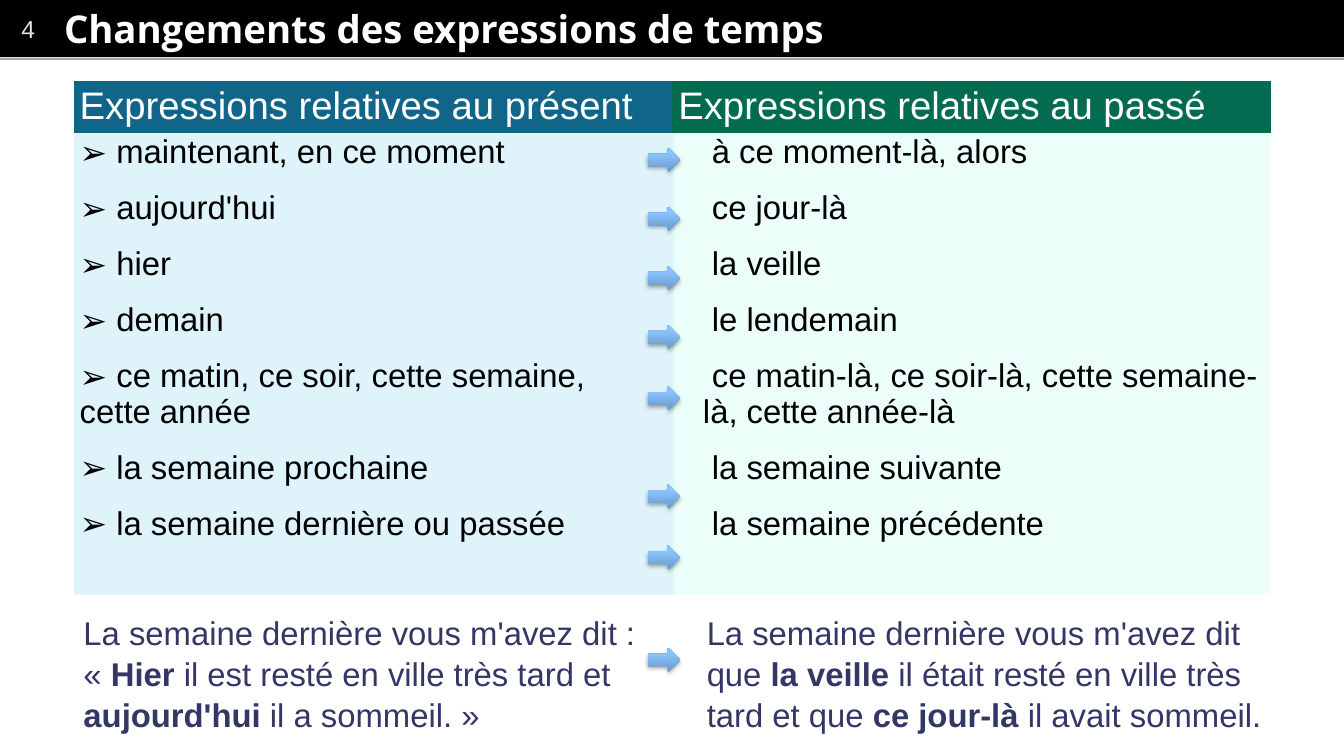
from lxml.etree import SubElement
from pptx import Presentation
from pptx.dml.color import RGBColor
from pptx.enum.shapes import MSO_CONNECTOR, MSO_SHAPE
from pptx.enum.text import MSO_ANCHOR, MSO_AUTO_SIZE
from pptx.oxml import parse_xml
from pptx.oxml.ns import nsdecls, qn
from pptx.util import Pt

SCALE = 9144
NO_GRID_STYLE = "{2D5ABB26-0587-4C30-8999-92F81FD0307C}"
HEADINGS = [
    ("Expressions relatives au présent", "106588"),
    ("Expressions relatives au passé", "036B50"),
]
CHANGES = [
    ("maintenant, en ce moment", "à ce moment-là, alors", 150),
    ("aujourd'hui", "ce jour-là", 210),
    ("hier", "la veille", 270),
    ("demain", "le lendemain", 330),
    ("ce matin, ce soir, cette semaine,\vcette année",
     "ce matin-là, ce soir-là, cette semaine-là, cette année-là", 392),
    ("la semaine prochaine", "la semaine suivante", 492),
    ("la semaine dernière ou passée", "la semaine précédente", 554),
]
DIRECT_SPEECH = [
    ("La semaine dernière vous m'avez dit : « ", False),
    ("Hier", True),
    (" il est resté en ville très tard et ", False),
    ("aujourd'hui", True),
    (" il a sommeil. »", False),
]
REPORTED_SPEECH = [
    ("La semaine dernière vous m'avez dit que ", False),
    ("la veille", True),
    (" il était resté en ville très tard et que ", False),
    ("ce jour-là ", True),
    ("il avait sommeil.", False),
]


def px(length):
    """Turn whole px into EMU."""
    return length * SCALE


def color(value):
    """Turn a hex string into a colour."""
    return RGBColor.from_string(value)


def write(paragraph, text, *, size=24, font="Arial", ink="000000", bold=False,
          after=0, spacing=None, margin=0, indent=0, bullet=None):
    """Add formatted text, given as a string or as (text, bold) pairs."""
    properties = paragraph._p.get_or_add_pPr()
    properties.set("marL", str(px(margin)))
    properties.set("indent", str(px(indent)))
    paragraph.space_after = Pt(after)
    if spacing:
        paragraph.line_spacing = spacing
    if bullet:
        SubElement(properties, qn("a:buFont"), typeface="Arial")
        SubElement(properties, qn("a:buChar"), char=bullet)
    runs = [(text, bold)] if isinstance(text, str) else text
    for index, (part, strong) in enumerate(runs):
        for number, line in enumerate(part.split("\v")):
            if number:
                paragraph.add_line_break()
            run = paragraph.add_run()
            run.text = line
            run.font.name = font
            run.font.size = Pt(size)
            run.font.bold = strong
            run.font.color.rgb = color(ink)


class Deck:
    """Hold the style and the current slide."""

    def __init__(self, width, height):
        """Start a presentation with one blank slide."""
        self.presentation = Presentation()
        self.presentation.slide_width = px(width)
        self.presentation.slide_height = px(height)
        self.slide = self.presentation.slides.add_slide(
            self.presentation.slide_layouts[6])
        self.shapes = self.slide.shapes

    def shape(self, kind, left, top, width, height):
        """Add a preset shape without line or shadow."""
        shape = self.shapes.add_shape(
            kind, px(left), px(top), px(width), px(height))
        shape.shadow.inherit = False
        shape.line.fill.background()
        return shape

    def panel(self, left, top, width, height, fill, opacity=100):
        """Add a filled rectangle."""
        shape = self.shape(MSO_SHAPE.RECTANGLE, left, top, width, height)
        shape.fill.solid()
        shape.fill.fore_color.rgb = color(fill)
        if opacity < 100:
            tint = shape._element.spPr.find(qn("a:solidFill"))[0]
            SubElement(tint, qn("a:alpha"), val=str(opacity * 1000))
        return shape

    def rule(self, left, top, right, ink, weight):
        """Add a horizontal line."""
        line = self.shapes.add_connector(
            MSO_CONNECTOR.STRAIGHT, px(left), px(top), px(right), px(top))
        line.line.color.rgb = color(ink)
        line.line.width = Pt(weight)
        SubElement(line._element.spPr, qn("a:effectLst"))

    def text(self, left, top, width, height, text, *, inset=(10, 5),
             anchor=MSO_ANCHOR.TOP, grow=False, **style):
        """Add a wrapping text box."""
        box = self.shapes.add_textbox(
            px(left), px(top), px(width), px(height))
        frame = box.text_frame
        frame.word_wrap = True
        if grow:
            frame.auto_size = MSO_AUTO_SIZE.SHAPE_TO_FIT_TEXT
        frame.vertical_anchor = anchor
        frame.margin_left = frame.margin_right = px(inset[0])
        frame.margin_top = frame.margin_bottom = px(inset[1])
        write(frame.paragraphs[0], text, **style)

    def arrow(self, left, top):
        """Add a shaded arrow with a soft shadow."""
        shape = self.shape(MSO_SHAPE.RIGHT_ARROW, left, top, 33, 25)
        shape.fill.background()
        properties = shape._element.spPr
        stops = "".join(
            f'<a:gs pos="{place}000"><a:srgbClr val="{ink}"/></a:gs>'
            for place, ink in [(0, "6798CA"), (80, "8CC6FF"), (100, "8EC7FF")])
        properties.replace(properties.find(qn("a:noFill")), parse_xml(
            f'<a:gradFill {nsdecls("a")}><a:gsLst>{stops}</a:gsLst>'
            '<a:lin ang="16200000" scaled="0"/></a:gradFill>'))
        properties.find(qn("a:effectLst")).append(parse_xml(
            f'<a:outerShdw {nsdecls("a")} blurRad="{Pt(3.1)}" '
            f'dist="{Pt(1.8)}" dir="5400000" rotWithShape="0">'
            '<a:srgbClr val="000000"><a:alpha val="35000"/></a:srgbClr>'
            '</a:outerShdw>'))

    def table(self, left, top, widths, heights):
        """Add a plain table without borders."""
        table = self.shapes.add_table(
            len(heights), len(widths), px(left), px(top),
            px(sum(widths)), px(sum(heights))).table
        table.first_row = table.horz_banding = False
        table._tbl.tblPr.find(qn("a:tableStyleId")).text = NO_GRID_STYLE
        for column, width in zip(table.columns, widths):
            column.width = px(width)
        for row, height in zip(table.rows, heights):
            row.height = px(height)
        return table

    def cell(self, cell, lines, fill=None, anchor=MSO_ANCHOR.TOP, **style):
        """Fill a table cell with one paragraph per line."""
        cell.margin_left = cell.margin_right = px(6)
        cell.margin_top = cell.margin_bottom = px(3)
        cell.vertical_anchor = anchor
        if fill:
            cell.fill.solid()
            cell.fill.fore_color.rgb = color(fill)
        else:
            cell.fill.background()
        frame = cell.text_frame
        for index, line in enumerate(lines):
            paragraph = frame.add_paragraph() if index else frame.paragraphs[0]
            write(paragraph, line, **style)


def main():
    """Build the slide on changes of time expressions."""
    deck = Deck(1365, 768)
    deck.panel(0, 0, 1365, 58, "000000")
    deck.rule(0, 60, 1365, "A6A6A6", 2)
    deck.text(0, 0, 60, 58, "4", anchor=MSO_ANCHOR.MIDDLE,
              size=18, ink="E7DED1", margin=12)
    deck.text(61, 1, 1285, 56, "Changements des expressions de temps",
              inset=(4, 4), anchor=MSO_ANCHOR.MIDDLE, size=28,
              font="Open Sans", ink="FFFFFF", bold=True)

    deck.panel(75, 132, 610, 472, "C0E8F8", opacity=50)
    deck.panel(682, 132, 608, 472, "DAFEF5", opacity=50)
    table = deck.table(75, 82, [608, 608], [49, 455])
    for column, (heading, fill) in enumerate(HEADINGS):
        deck.cell(table.cell(0, column), [heading], fill=fill,
                  anchor=MSO_ANCHOR.MIDDLE, size=28, ink="FFFFFF")
    present, past, arrow_tops = zip(*CHANGES)
    body = {"after": 15, "spacing": 0.97}
    deck.cell(table.cell(1, 0), [f" {line}" for line in present],
              bullet="➢", **body)
    deck.cell(table.cell(1, 1), past, margin=25, indent=9, **body)

    for left, speech in [(75, DIRECT_SPEECH), (708, REPORTED_SPEECH)]:
        deck.text(left, 615, 607, 131, speech, grow=True, ink="333766",
                  spacing=1.05)
    for top in (*arrow_tops, 658):
        deck.arrow(658, top)
    deck.presentation.save("out.pptx")


if __name__ == "__main__":
    main()
